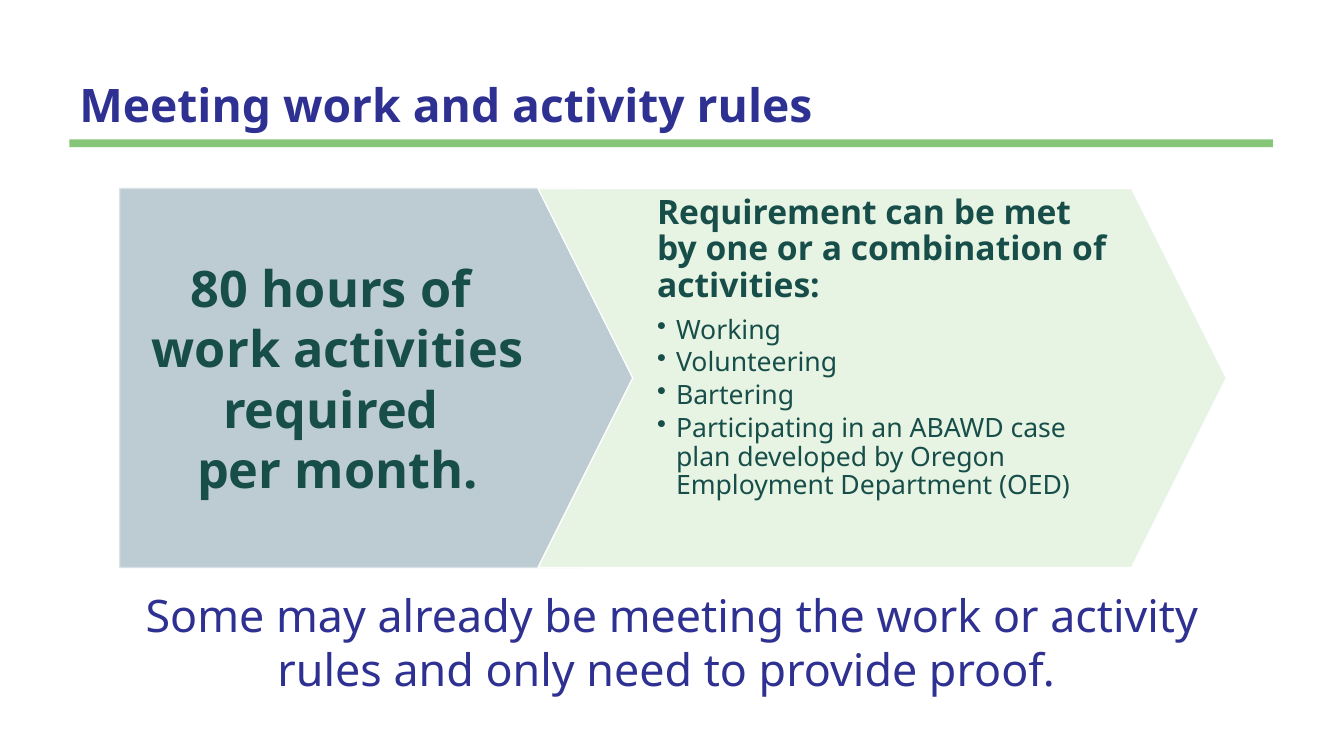
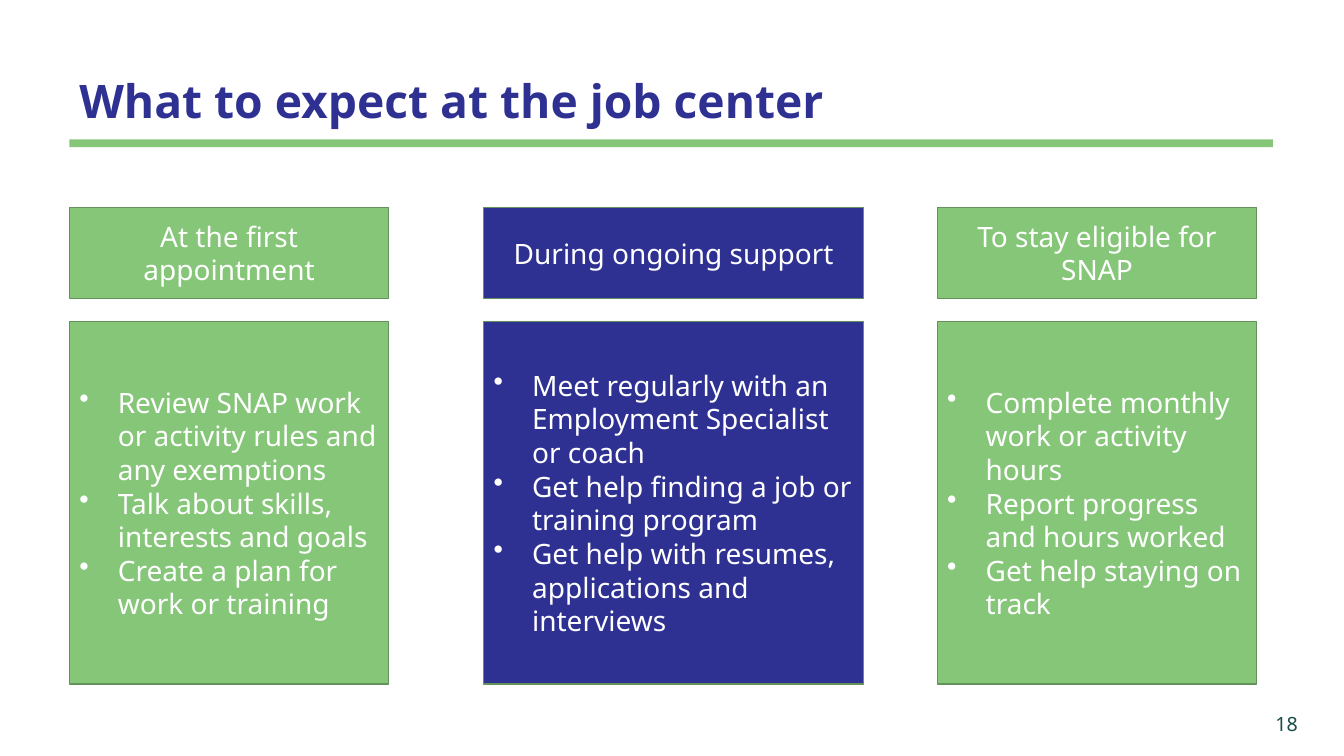
from dataclasses import dataclass, replace

from lxml import etree
from pptx import Presentation
from pptx.dml.color import RGBColor
from pptx.enum.shapes import MSO_SHAPE
from pptx.enum.text import MSO_ANCHOR, PP_ALIGN
from pptx.oxml.ns import qn
from pptx.presentation import Presentation as Deck
from pptx.shapes.autoshape import Shape
from pptx.slide import Slide
from pptx.util import Cm, Pt

RECTANGLE = MSO_SHAPE.RECTANGLE
PENTAGON = MSO_SHAPE.PENTAGON
CHEVRON = MSO_SHAPE.CHEVRON
TOP, MIDDLE, BOTTOM = MSO_ANCHOR.TOP, MSO_ANCHOR.MIDDLE, MSO_ANCHOR.BOTTOM
LEFT, CENTER, RIGHT = PP_ALIGN.LEFT, PP_ALIGN.CENTER, PP_ALIGN.RIGHT

FONT = "Noto Sans"
COLORS = {
    "white": "FFFFFF",
    "navy": "2E3192",
    "green": "86C679",
    "green_edge": "63925A",
    "teal": "184E49",
    "steel": "BDCCD3",
    "steel_edge": "D8E1E5",
    "mint": "E7F4E4",
}


@dataclass(frozen=True)
class Box:
    left: float
    top: float
    width: float
    height: float


@dataclass(frozen=True)
class Style:
    size: float
    color: str
    bold: bool = False
    align: PP_ALIGN = LEFT
    line_spacing: float = 1.0
    space_after: float = 0
    indent: float = 0


@dataclass(frozen=True)
class Line:
    text: str
    style: Style


@dataclass(frozen=True)
class Arrow:
    preset: MSO_SHAPE
    box: Box
    fill: str
    edge: str
    text_box: Box
    insets: Box
    anchor: MSO_ANCHOR
    lines: list[Line]


@dataclass(frozen=True)
class Column:
    left: float
    width: float
    fill: str
    heading: str
    points: list[str]


DEFAULT_INSETS = Box(0.25, 0.13, 0.25, 0.13)
RULE = Box(1.75, 3.51, 30.33, 0.2)
TITLE = Style(33, "navy", bold=True, line_spacing=0.9)
HOURS = Style(36, "teal", bold=True, align=CENTER)
LEAD = Style(24, "teal", bold=True, line_spacing=0.9, space_after=8.4)
ACTIVITY = Style(19, "teal", line_spacing=0.9, space_after=2.85, indent=0.48)
CLOSING = Style(32, "navy", align=CENTER)
NUMBER = Style(14, "teal", align=RIGHT)
HEADING = Style(20, "white", align=CENTER)
POINT = replace(HEADING, align=LEFT, indent=0.97)

ARROW_TOP, ARROW_HEIGHT = 4.75, 9.55
ARROWS = [
    Arrow(
        PENTAGON,
        Box(3.02, ARROW_TOP, 14, ARROW_HEIGHT),
        "steel",
        "steel_edge",
        Box(3.02, ARROW_TOP, 12.8, ARROW_HEIGHT),
        Box(0.61, 0.25, 2.44, 0.25),
        MIDDLE,
        [
            Line("80 hours of ", HOURS),
            Line("work activities required ", HOURS),
            Line("per month.", HOURS),
        ],
    ),
    Arrow(
        CHEVRON,
        Box(13.56, ARROW_TOP, 17.35, ARROW_HEIGHT),
        "mint",
        "white",
        Box(15.95, ARROW_TOP, 12.57, ARROW_HEIGHT),
        Box(0.61, 0.18, 0.61, 0.18),
        TOP,
        [
            Line("Requirement can be met by one or a combination of activities:", LEAD),
            Line("Working", ACTIVITY),
            Line("Volunteering", ACTIVITY),
            Line("Bartering", ACTIVITY),
            Line(
                "Participating in an ABAWD case plan developed by "
                "Oregon Employment Department (OED)",
                ACTIVITY,
            ),
        ],
    ),
]

COLUMNS = [
    Column(
        1.75, 8.05, "green", "At the first appointment",
        [
            "Review SNAP work or activity rules and any exemptions",
            "Talk about skills, interests and goals",
            "Create a plan for work or training",
        ],
    ),
    Column(
        12.19, 9.58, "navy", "During ongoing support",
        [
            "Meet regularly with an Employment Specialist or coach",
            "Get help finding a job or training program",
            "Get help with resumes, applications and interviews",
        ],
    ),
    Column(
        23.62, 8.05, "green", "To stay eligible for SNAP",
        [
            "Complete monthly work or activity hours",
            "Report progress and hours worked",
            "Get help staying on track",
        ],
    ),
]


def color(name: str) -> RGBColor:
    return RGBColor.from_string(COLORS[name])


def lengths(box: Box) -> tuple[Cm, Cm, Cm, Cm]:
    return Cm(box.left), Cm(box.top), Cm(box.width), Cm(box.height)


def write_lines(
    shape: Shape, lines: list[Line], anchor: MSO_ANCHOR, insets: Box = DEFAULT_INSETS
) -> None:
    frame = shape.text_frame
    frame.word_wrap = True
    frame.vertical_anchor = anchor
    (frame.margin_left, frame.margin_top,
     frame.margin_right, frame.margin_bottom) = lengths(insets)
    frame.text = "\n".join(line.text for line in lines)
    for paragraph, line in zip(frame.paragraphs, lines):
        style = line.style
        paragraph.alignment = style.align
        paragraph.line_spacing = style.line_spacing
        paragraph.space_after = Pt(style.space_after)
        if style.indent:
            properties = paragraph._p.get_or_add_pPr()
            properties.set("marL", str(Cm(style.indent)))
            properties.set("indent", str(-Cm(style.indent)))
            etree.SubElement(properties, qn("a:buChar")).set("char", "•")
        for run in paragraph.runs:
            run.font.name = FONT
            run.font.size = Pt(style.size)
            run.font.bold = style.bold
            run.font.color.rgb = color(style.color)


def add_text(
    slide: Slide, box: Box, lines: list[Line], anchor: MSO_ANCHOR = TOP,
    insets: Box = DEFAULT_INSETS,
) -> None:
    write_lines(slide.shapes.add_textbox(*lengths(box)), lines, anchor, insets)


def add_panel(
    slide: Slide, box: Box, fill: str, edge: str | None = None,
    preset: MSO_SHAPE = RECTANGLE,
) -> Shape:
    shape = slide.shapes.add_shape(preset, *lengths(box))
    shape.shadow.inherit = False
    shape.fill.solid()
    shape.fill.fore_color.rgb = color(fill)
    if edge:
        shape.line.color.rgb = color(edge)
        shape.line.width = Pt(1)
    else:
        shape.line.fill.background()
    return shape


def add_titled_slide(presentation: Deck, title: str, title_box: Box) -> Slide:
    slide = presentation.slides.add_slide(presentation.slide_layouts[6])
    add_panel(slide, RULE, "green")
    add_text(slide, title_box, [Line(title, TITLE)], BOTTOM)
    return slide


def add_arrow(slide: Slide, arrow: Arrow) -> None:
    shape = add_panel(slide, arrow.box, arrow.fill, arrow.edge, arrow.preset)
    shape.adjustments[0] = 0.25
    add_text(slide, arrow.text_box, arrow.lines, arrow.anchor, arrow.insets)


def add_column(slide: Slide, column: Column) -> None:
    parts = [
        (5.23, 2.29, [Line(column.heading, HEADING)]),
        (8.1, 9.14, [Line(point, POINT) for point in column.points]),
    ]
    for top, height, lines in parts:
        box = Box(column.left, top, column.width, height)
        panel = add_panel(slide, box, column.fill, "green_edge")
        write_lines(panel, lines, MIDDLE)


def build_rules_slide(presentation: Deck) -> None:
    slide = add_titled_slide(
        presentation, "Meeting work and activity rules", Box(1.75, 1.19, 30.35, 2.29)
    )
    for arrow in ARROWS:
        add_arrow(slide, arrow)
    closing = (
        "Some may already be meeting the work or activity rules "
        "and only need to provide proof. "
    )
    add_text(slide, Box(3, 14.68, 27.89, 3), [Line(closing, CLOSING)])


def build_expectations_slide(presentation: Deck) -> None:
    slide = add_titled_slide(
        presentation, "What to expect at the job center", Box(1.75, 1.07, 27.79, 2.29)
    )
    for column in COLUMNS:
        add_column(slide, column)
    add_text(slide, Box(26.64, 17.98, 6.32, 0.51), [Line("18", NUMBER)], MIDDLE)


def main() -> None:
    presentation = Presentation()
    presentation.slide_width = Cm(33.87)
    presentation.slide_height = Cm(19.05)
    build_rules_slide(presentation)
    build_expectations_slide(presentation)
    presentation.save("out.pptx")


if __name__ == "__main__":
    main()
